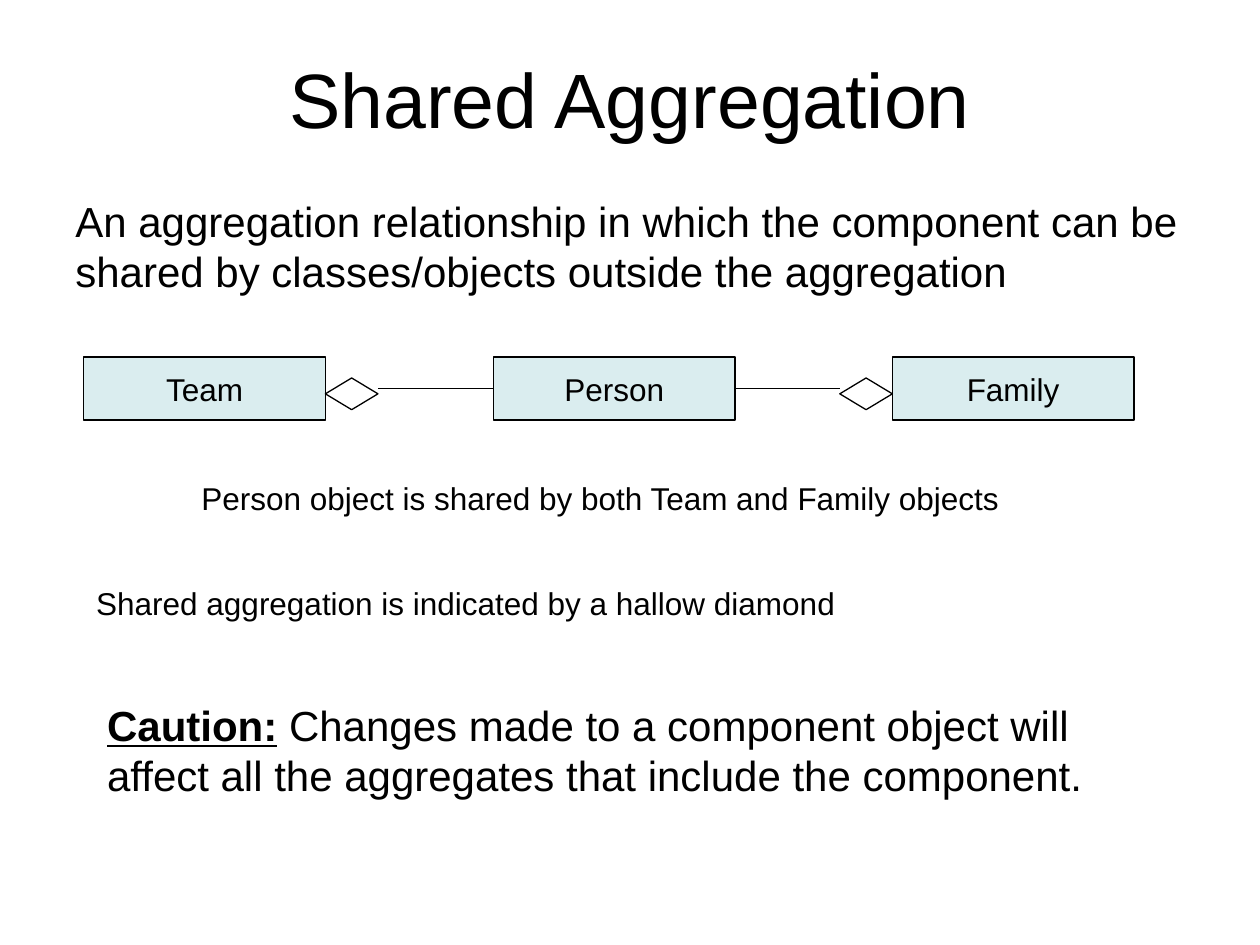
from lxml import etree
from pptx import Presentation
from pptx.dml.color import RGBColor
from pptx.enum.shapes import MSO_CONNECTOR, MSO_SHAPE
from pptx.enum.text import MSO_ANCHOR, PP_ALIGN
from pptx.oxml.ns import qn
from pptx.util import Cm, Pt

RECT, DIAMOND = MSO_SHAPE.RECTANGLE, MSO_SHAPE.DIAMOND
LINE = MSO_CONNECTOR.STRAIGHT
MIDDLE, CENTER = MSO_ANCHOR.MIDDLE, PP_ALIGN.CENTER
LEFT, RIGHT = 1, 3  # connection sites of a rectangle

FONT, INK, FILL = "Arial", "000000", "DAEDEF"

# Content: left, top, width, height in cm, size in points, text
TITLE = (1.27, 0.76, 22.86, 2.41, 44, "Shared Aggregation")
NOTES = [
    (1.27, 3.81, 23.06, 2.29, 24, "An aggregation relationship in which the "
     "component can be shared by classes/objects outside the aggregation"),
    (3.81, 9.53, 17.35, 1.02, 18,
     "Person object is shared by both Team and Family objects"),
    (1.69, 11.64, 16.08, 1.02, 18,
     "Shared aggregation is indicated by a hallow diamond"),
]
CAUTION = (1.91, 13.97, 21.39, 2.29, 24, "Caution:")
WARNING = (" Changes made to a component object will affect all the "
           "aggregates that include the component.")

# Class boxes: name and left edge
CLASSES = [("Team", 1.69), ("Person", 9.95), ("Family", 17.99)]
TOP, WIDE, HIGH = 7.2, 4.87, 1.27
GEM_TOP, GEM_WIDE, GEM_HIGH = 7.62, 1.06, 0.64


def color(code):
    return RGBColor.from_string(code)


def style(run, size):
    run.font.name, run.font.size = FONT, Pt(size)
    run.font.color.rgb = color(INK)


def write(shape, text, size):
    para = shape.text_frame.paragraphs[0]
    para.text = text
    style(para.runs[0], size)
    return para


def add_text(left, top, wide, high, size, text):
    box = slide.shapes.add_textbox(Cm(left), Cm(top), Cm(wide), Cm(high))
    box.text_frame.word_wrap = True
    return box, write(box, text, size)


def add_part(kind, left, top, wide, high):
    part = slide.shapes.add_shape(kind, Cm(left), Cm(top), Cm(wide), Cm(high))
    part.shadow.inherit = False
    part.fill.background()
    part.line.color.rgb, part.line.width = color(INK), Pt(0.75)
    return part


def add_link(box, site, end):
    mid = Cm(TOP + HIGH / 2)
    link = slide.shapes.add_connector(LINE, box.left, mid, Cm(end), mid)
    link.begin_connect(box, site)
    link.line.color.rgb, link.line.width = color(INK), Pt(0.75)
    etree.SubElement(link._element.spPr, qn("a:effectLst"))


show = Presentation()
show.slide_width, show.slide_height = Cm(25.4), Cm(19.05)
slide = show.slides.add_slide(show.slide_layouts[6])

# Title and notes
box, para = add_text(*TITLE)
box.text_frame.vertical_anchor = MIDDLE
para.alignment = CENTER
for note in NOTES:
    add_text(*note)

# Caution with a bold, underlined lead word
box, para = add_text(*CAUTION)
para.runs[0].font.bold = para.runs[0].font.underline = True
rest = para.add_run()
rest.text = WARNING
style(rest, CAUTION[4])

# Class boxes
boxes = {}
for name, left in CLASSES:
    box = boxes[name] = add_part(RECT, left, TOP, WIDE, HIGH)
    box.fill.solid()
    box.fill.fore_color.rgb = color(FILL)
    box.text_frame.word_wrap = False
    box.text_frame.vertical_anchor = MIDDLE
    write(box, name, 18).alignment = CENTER

# Hollow diamonds beside the two wholes, each linked to the shared part
spots = dict(CLASSES)
team_gem = spots["Team"] + WIDE
family_gem = spots["Family"] - GEM_WIDE
for left in (team_gem, family_gem):
    add_part(DIAMOND, left, GEM_TOP, GEM_WIDE, GEM_HIGH)
add_link(boxes["Person"], LEFT, team_gem + GEM_WIDE)
add_link(boxes["Person"], RIGHT, family_gem)

show.save("out.pptx")
